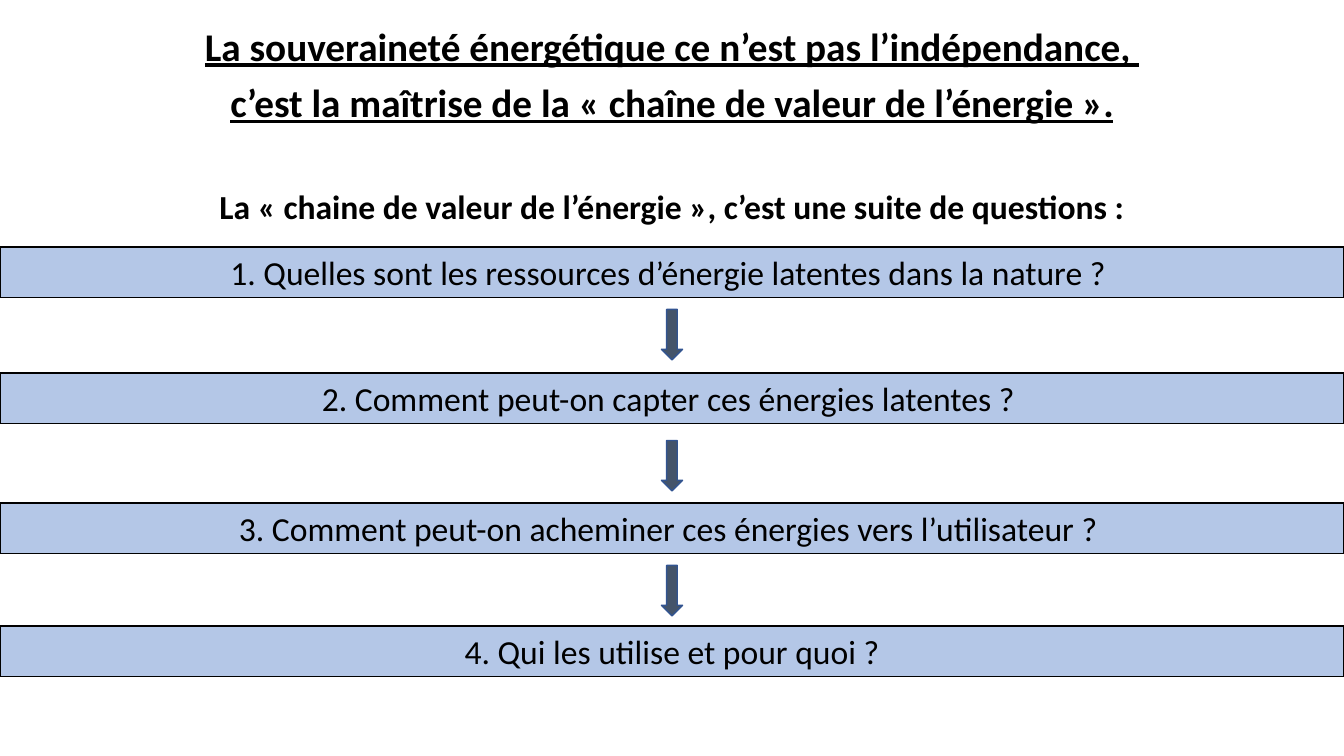
from pptx import Presentation
from pptx.dml.color import RGBColor
from pptx.enum.shapes import MSO_SHAPE
from pptx.enum.text import MSO_ANCHOR, MSO_AUTO_SIZE, PP_ALIGN
from pptx.util import Inches, Pt

BLACK = RGBColor(0x00, 0x00, 0x00)
LIGHT_BLUE = RGBColor(0xB4, 0xC7, 0xE7)
SLATE = RGBColor(0x44, 0x54, 0x6A)
DARK_BLUE = RGBColor(0x32, 0x54, 0x91)

SLIDE_WIDTH, SLIDE_HEIGHT = 13.33, 7.5
BAR_HEIGHT = 0.5
ARROW_WIDTH, ARROW_HEIGHT = 0.21, 0.5

# text, size, underlined, points before
HEADING = [
    ("La souveraineté énergétique ce n’est pas l’indépendance, ", 28, True, 10),
    ("c’est la maîtrise de la « chaîne de valeur de l’énergie ».", 28, True, 10),
    ("La « chaine de valeur de l’énergie », c’est une suite de questions :", 24, False, 46),
]
QUESTIONS = [
    (2.45, "1. Quelles sont les ressources d’énergie latentes dans la nature ? "),
    (3.7, "2. Comment peut-on capter ces énergies latentes ? "),
    (4.99, "3. Comment peut-on acheminer ces énergies vers l’utilisateur ? "),
    (6.21, "4. Qui les utilise et pour quoi ?"),
]
ARROW_TOPS = [3.07, 4.37, 5.61]


def write(para, text, size=24, bold=False, underline=False, before=0, spacing=1.0):
    para.alignment = PP_ALIGN.CENTER
    para.space_before = Pt(before)
    para.line_spacing = spacing
    span = para.add_run()
    span.text = text
    font = span.font
    font.name = "Calibri"
    font.size = Pt(size)
    font.bold = bold
    font.underline = underline
    font.color.rgb = BLACK


class QuestionPage:
    def __init__(self, deck):
        self.page = deck.slides.add_slide(deck.slide_layouts[5])

    def heading(self, lines, left, top, width, height):
        box = self.page.shapes.title
        box.left, box.top = Inches(left), Inches(top)
        box.width, box.height = Inches(width), Inches(height)
        frame = box.text_frame
        frame.auto_size = MSO_AUTO_SIZE.NONE
        frame.vertical_anchor = MSO_ANCHOR.MIDDLE
        for index, (text, size, underline, before) in enumerate(lines):
            para = frame.add_paragraph() if index else frame.paragraphs[0]
            write(para, text, size=size, bold=True, underline=underline,
                  before=before, spacing=0.9)

    def shape(self, kind, left, top, width, height, fill, line):
        box = self.page.shapes.add_shape(
            kind, Inches(left), Inches(top), Inches(width), Inches(height))
        box.shadow.inherit = False
        box.fill.solid()
        box.fill.fore_color.rgb = fill
        box.line.color.rgb = line
        box.line.width = Pt(1)
        return box

    def question(self, top, text):
        box = self.shape(MSO_SHAPE.RECTANGLE, 0, top, SLIDE_WIDTH, BAR_HEIGHT,
                         LIGHT_BLUE, BLACK)
        frame = box.text_frame
        frame.word_wrap = True
        frame.auto_size = MSO_AUTO_SIZE.SHAPE_TO_FIT_TEXT
        frame.vertical_anchor = MSO_ANCHOR.MIDDLE
        write(frame.paragraphs[0], text)

    def arrow(self, top):
        left = (SLIDE_WIDTH - ARROW_WIDTH) / 2
        self.shape(MSO_SHAPE.DOWN_ARROW, left, top, ARROW_WIDTH, ARROW_HEIGHT,
                   SLATE, DARK_BLUE)


def main():
    deck = Presentation()
    deck.slide_width, deck.slide_height = Inches(SLIDE_WIDTH), Inches(SLIDE_HEIGHT)
    page = QuestionPage(deck)
    page.heading(HEADING, 0.13, 0.15, 13.07, 2.22)
    for top, text in QUESTIONS:
        page.question(top, text)
    for top in ARROW_TOPS:
        page.arrow(top)
    deck.save("out.pptx")


if __name__ == "__main__":
    main()
